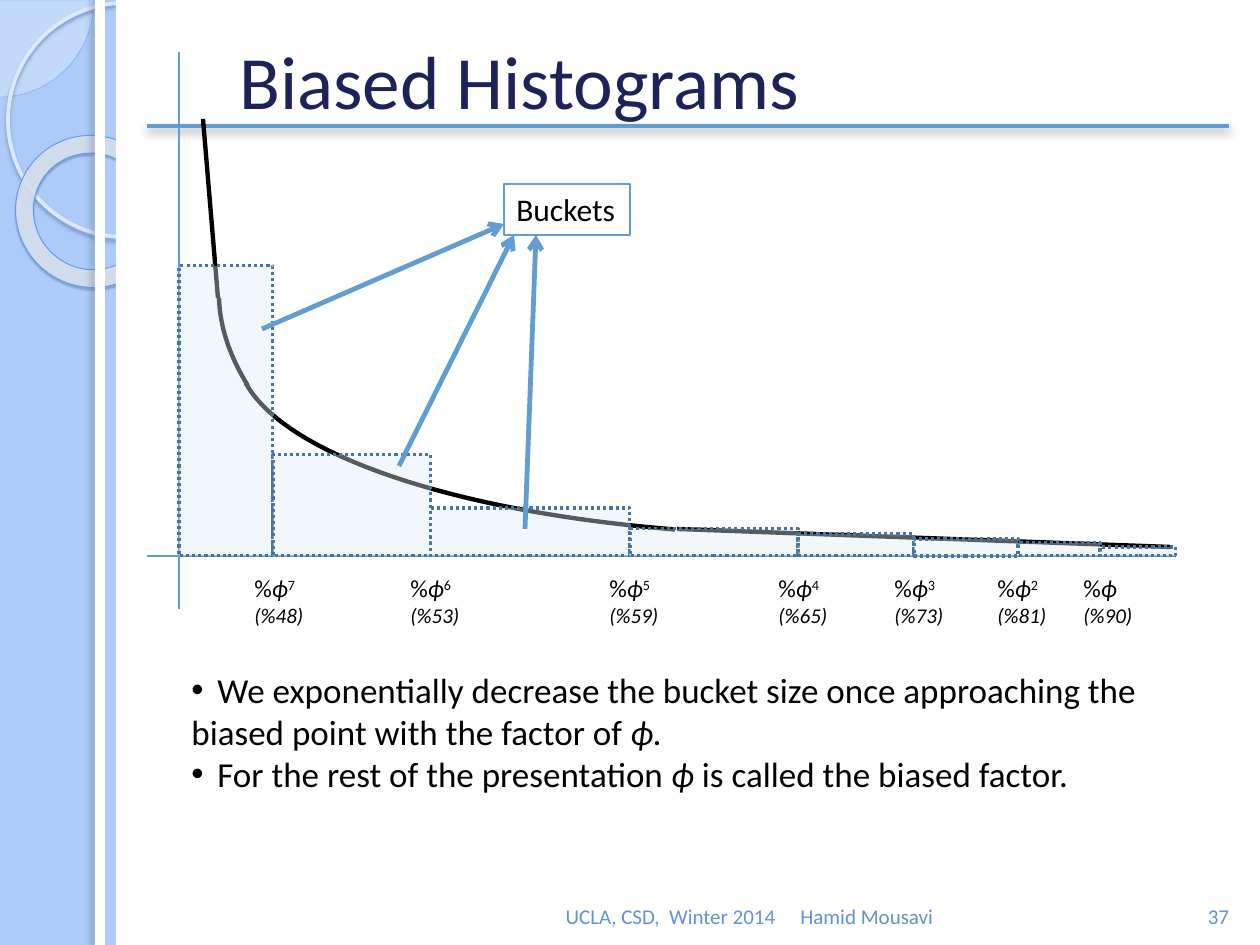
"""Build the Biased Histograms slide."""
from lxml.etree import SubElement
from pptx import Presentation
from pptx.dml.color import RGBColor
from pptx.enum.dml import MSO_LINE as DASH
from pptx.enum.shapes import MSO_CONNECTOR as CONN, MSO_SHAPE as SHAPE
from pptx.enum.text import MSO_ANCHOR as ANCHOR, PP_ALIGN as ALIGN
from pptx.oxml.ns import qn
from pptx.util import Emu, Pt

PX = 914400 / 126
BLUE, BLACK, WHITE, FOOT = "629DD1", "000000", "FFFFFF", "6391D5"
rgb = RGBColor.from_string


def paint(sp, fill=None, line=None, width=1, alpha=None, dash=None, shadow=None, arrow=False):
    """Set fill, line, arrowhead and shadow of a shape or connector."""
    spPr = sp._element.spPr
    if fill:
        sp.fill.solid()
        sp.fill.fore_color.rgb = rgb(fill)
        if alpha:
            SubElement(spPr.find(".//" + qn("a:srgbClr")), qn("a:alpha"), val=str(alpha * 1000))
    elif hasattr(sp, "fill"):
        sp.fill.background()
    if line:
        sp.line.color.rgb = rgb(line)
        sp.line.width = Pt(width)
        if dash:
            sp.line.dash_style = dash
    else:
        sp.line.fill.background()
    if arrow:
        SubElement(spPr.find(qn("a:ln")), qn("a:tailEnd"), type="arrow")
    effects = SubElement(spPr, qn("a:effectLst"))
    if shadow:
        color, opacity, blur, dist, angle = shadow
        sh = SubElement(effects, qn("a:outerShdw"), blurRad=str(Pt(blur)), dist=str(Pt(dist)),
                        dir=str(angle * 60000), algn="ctr", rotWithShape="0")
        clr = SubElement(sh, qn("a:srgbClr"), val=color)
        SubElement(clr, qn("a:alpha"), val=str(opacity * 1000))


def write(sp, paragraphs, color=BLACK, align=ALIGN.LEFT, anchor=ANCHOR.TOP, wrap=True):
    """Fill a text frame with paragraphs of (text, format) runs."""
    tf = sp.text_frame
    tf.word_wrap, tf.vertical_anchor = wrap, anchor
    for i, runs in enumerate(paragraphs):
        p = tf.add_paragraph() if i else tf.paragraphs[0]
        p.alignment = align
        for text, fmt in runs:
            r = p.add_run()
            r.text = text
            r.font.name, r.font.color.rgb = "Calibri", rgb(color)
            for name, value in fmt.items():
                if name == "baseline":
                    r.font._element.set(name, value)
                else:
                    setattr(r.font, name, value)
    return tf


prs = Presentation()
prs.slide_width, prs.slide_height = Emu(9144000), Emu(6858000)
s = prs.slides.add_slide(prs.slide_layouts[6])
s.background.fill.solid()
s.background.fill.fore_color.rgb = rgb("ACCBF9")

decor = [
    (SHAPE.PIE, (-95, -97, 189, 194), (0, 54), 0,
     dict(fill="F2F6FF", alpha=33, line="72A7F6", width=0.25)),
    (SHAPE.OVAL, (8, 3, 234, 234), (), 0,
     dict(line="DCE9FF", width=2.15, shadow=("7193C6", 85, 2, 2, 90))),
    (SHAPE.DONUT, (15, 136, 154, 151), (0.118,), 38.6,
     dict(fill="DDE5F2", alpha=85, line="659BEC", width=0.58, shadow=("31486A", 35, 1, 1.2, 75))),
    (SHAPE.RECTANGLE, (116, 0, 1144, 945), (), 0, dict(fill=WHITE)),
    (SHAPE.RECTANGLE, (95, 0, 10, 945), (), 0,
     dict(fill=WHITE, shadow=("54647E", 25, 3, 3, 180))),
]
curve = [
    (SHAPE.ARC, (237, 168, 1159, 367), (185.11, 214.12), 180, dict(line=BLACK, width=2.5)),
    (SHAPE.ARC, (208, 164, 655, 393), (201.81, 211.52), 198.7, dict(line=BLACK, width=2.5)),
]
edges = [179, 273, 431, 630, 798, 914, 1018, 1100, 1176]
tops = [266, 455, 508, 529, 534, 539, 543, 547]
base = 556
bars = [(SHAPE.RECTANGLE, (x, y, end - x, base - y), (), 0,
         dict(fill="E0EBF6", alpha=39, line="49749B", width=1.75, dash=DASH.ROUND_DOT))
        for x, end, y in zip(edges, edges[1:], tops)]

rule = dict(line=BLUE, width=2, shadow=(BLACK, 43, 5, 2, 90))
axis = dict(line=BLUE, width=0.75)
tail = dict(line=BLACK, width=2.5)
pointer = dict(line=BLUE, width=2.75, arrow=True)
lines = [
    ((147, 126, 1229, 126), rule),
    ((179, 609, 179, 52), axis),
    ((147, 556, 1176, 556), axis),
    ((203, 119, 218, 298), tail),
    ((677, 529, 1170, 547), tail),
]
pointers = [((262, 329, 504, 224), pointer), ((525, 529, 536, 235), pointer),
            ((399, 466, 514, 235), pointer)]

for shapes, connectors in ((decor, lines), (curve + bars, pointers)):
    for kind, box, adjustments, turn, look in shapes:
        sp = s.shapes.add_shape(kind, *(Emu(round(v * PX)) for v in box))
        for i, value in enumerate(adjustments):
            sp.adjustments[i] = value
        sp.rotation = turn
        paint(sp, **look)
    for ends, look in connectors:
        paint(s.shapes.add_connector(CONN.STRAIGHT, *(Emu(round(v * PX)) for v in ends)), **look)

small, italic = dict(size=Pt(12)), dict(size=Pt(14), italic=True)
body, phi = dict(size=Pt(20)), dict(size=Pt(20), italic=True)
foot = dict(color=FOOT, anchor=ANCHOR.BOTTOM)
texts = [
    ((227, 0, 1033, 158), [[("Biased Histograms", dict(size=Pt(43)))]],
     dict(color="1D2259", anchor=ANCHOR.MIDDLE)),
    ((788, 869, 399, 66), [[("Hamid Mousavi", small)]], foot),
    ((1187, 869, 63, 66), [[("37", small)]], dict(foot, align=ALIGN.CENTER)),
    ((494, 869, 294, 66), [[("UCLA, CSD,  Winter 2014", small)]], dict(foot, align=ALIGN.RIGHT)),
    ((504, 184, 126, 51), [[("Buckets", dict(size=Pt(18)))]], {}),
]
labels = [(242, "7", 48), (398, "6", 53), (597, "5", 59), (766, "4", 65),
          (882, "3", 73), (985, "2", 81), (1071, "", 90)]
for x, power, percent in labels:
    top_line = [("%", dict(size=Pt(14))), ("ϕ", italic)]
    if power:
        top_line.append((power, dict(size=Pt(14), baseline="30000")))
    texts.append(((x, 567, 74, 68),
                  [top_line, [(f"(%{percent})", dict(small, italic=True))]], dict(wrap=False)))
for box, paragraphs, look in texts:
    sp = s.shapes.add_textbox(*(Emu(round(v * PX)) for v in box))
    write(sp, paragraphs, **look)
    if box[:2] == (504, 184):
        paint(sp, line=BLUE, width=1.5)

notes = s.shapes.add_textbox(*(Emu(round(v * PX)) for v in (179, 662, 987, 140)))
tf = write(notes, [
    [("\tWe exponentially decrease the bucket size once approaching the biased point "
      "with the factor of ", body), ("ϕ.", phi)],
    [("\tFor the rest of the presentation ", body), ("ϕ ", phi),
     ("is called the biased factor.", body)],
])
for p in tf.paragraphs:
    pPr = p._p.get_or_add_pPr()
    SubElement(pPr, qn("a:buFont"), typeface="Arial")
    SubElement(pPr, qn("a:buChar"), char="•")
    SubElement(SubElement(pPr, qn("a:tabLst")), qn("a:tab"), pos=str(round(26 * PX)), algn="l")

prs.save("out.pptx")
